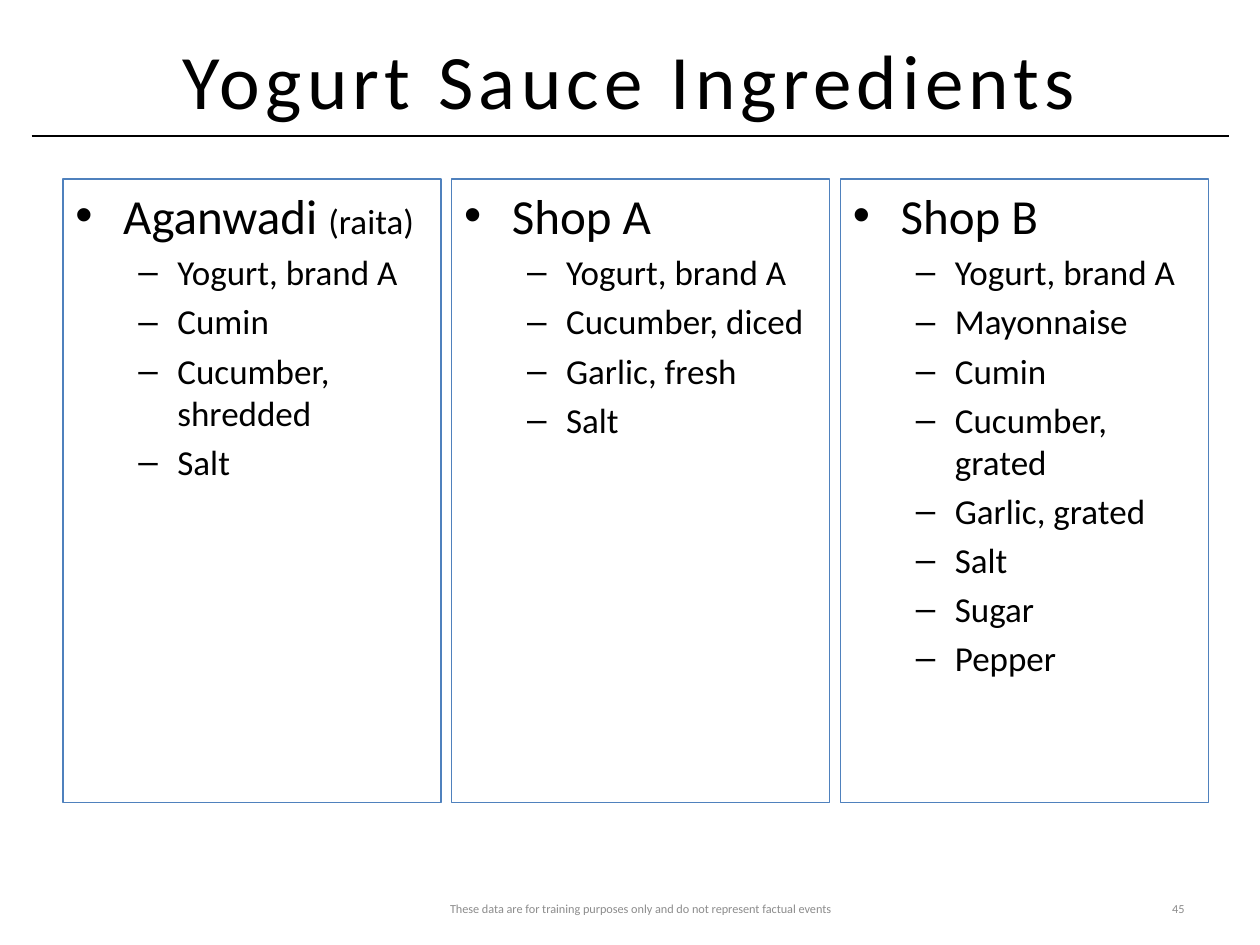
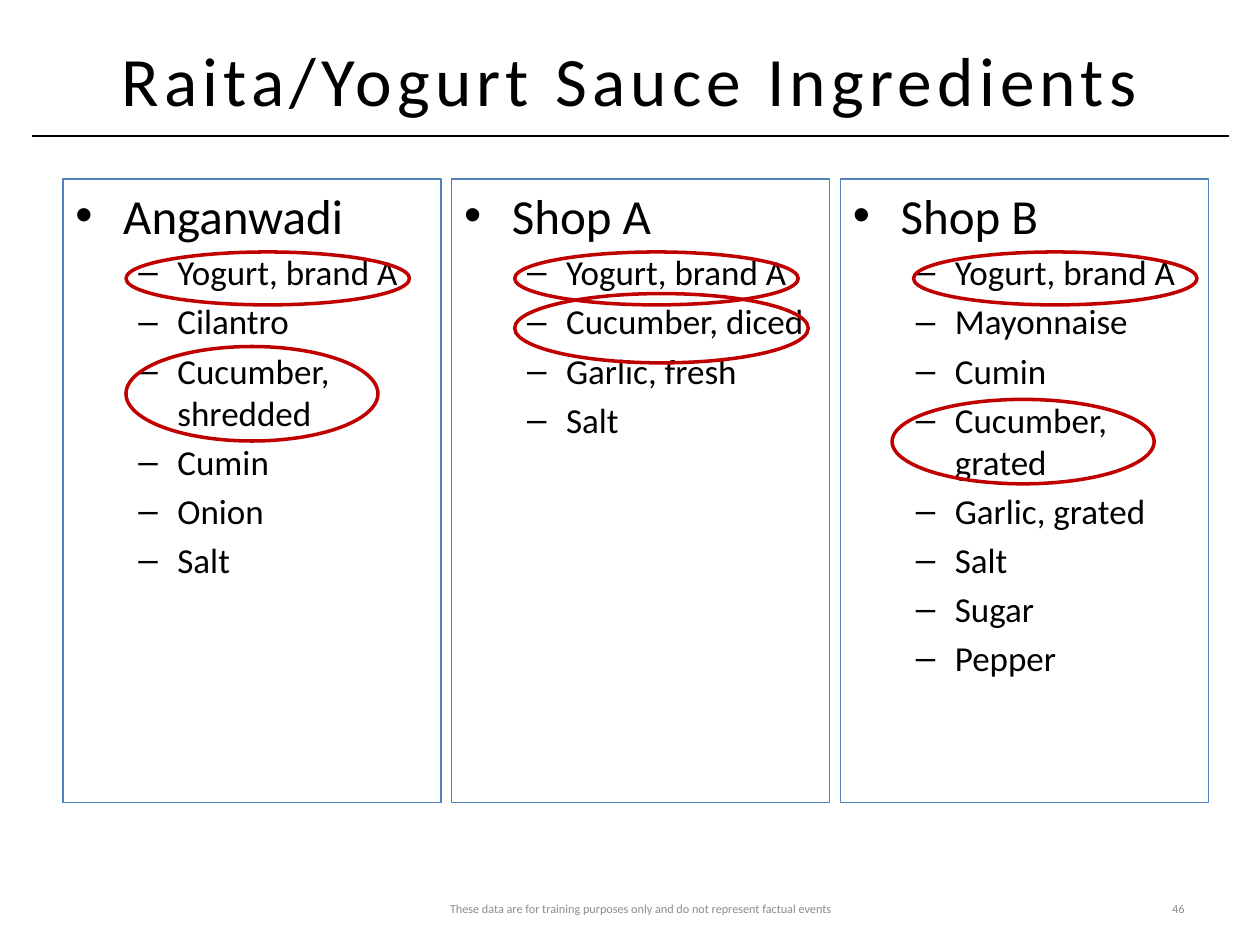
from lxml.etree import SubElement
from pptx import Presentation
from pptx.dml.color import RGBColor
from pptx.enum.shapes import MSO_CONNECTOR as CONN, MSO_SHAPE as SHAPE
from pptx.enum.text import MSO_ANCHOR as ANCHOR, PP_ALIGN as ALIGN
from pptx.oxml.ns import qn
from pptx.util import Inches, Pt

COLORS = {"text": "000000", "border": "4F81BD", "ring": "C00000", "footer": "8C8C8C"}
FONT = "Calibri"
DISCLAIMER = "These data are for training purposes only and do not represent factual events"
COLUMN_LEFT, COLUMN_TOP, COLUMN_PITCH, COLUMN_HEIGHT = 0.5, 1.42, 3.085, 4.95
COLUMN_WIDTHS = (3, 3, 2.92)

SHOP_A = ("Shop A", "", ["Yogurt, brand A", "Cucumber, diced", "Garlic, fresh", "Salt"])
SHOP_B = ("Shop B", "", ["Yogurt, brand A", "Mayonnaise", "Cumin", "Cucumber, grated",
                         "Garlic, grated", "Salt", "Sugar", "Pepper"])
RAITA = ("Aganwadi ", "(raita)", ["Yogurt, brand A", "Cumin", "Cucumber, shredded", "Salt"])
ANGANWADI = ("Anganwadi", "", ["Yogurt, brand A", "Cilantro", "Cucumber, shredded",
                               "Cumin", "Onion", "Salt"])
SHARED_RINGS = [
    [(0.5, 0.58, 2.25, 0.42), (0.5, 1.33, 2, 0.75)],
    [(0.5, 0.58, 2.25, 0.42), (0.5, 0.91, 2.33, 0.55)],
    [(0.58, 0.58, 2.25, 0.42), (0.41, 1.75, 2.08, 0.67)],
]
SLIDES = [
    ("Yogurt Sauce Ingredients", 44, 45, [RAITA, SHOP_A, SHOP_B], [[], [], []]),
    ("Raita/Yogurt Sauce Ingredients", 39.6, 46, [ANGANWADI, SHOP_A, SHOP_B], SHARED_RINGS),
]


def rgb(name):
    """Return a named palette colour."""
    return RGBColor.from_string(COLORS[name])


def add_run(p, text, size, color="text"):
    """Append a formatted run to a paragraph."""
    r = p.add_run()
    r.text = text
    r.font.name, r.font.size = FONT, Pt(size)
    r.font.color.rgb = rgb(color)
    return r


def add_label(s, box, text, size, align, color="text"):
    """Add a middle-anchored single-line text box and return its run."""
    tf = s.shapes.add_textbox(*map(Inches, box)).text_frame
    tf.word_wrap = True
    tf.vertical_anchor = ANCHOR.MIDDLE
    p = tf.paragraphs[0]
    p.alignment = align
    return add_run(p, text, size, color)


def add_outline(s, kind, box, color, width):
    """Add an unfilled preset shape with a coloured outline."""
    sp = s.shapes.add_shape(kind, *map(Inches, box))
    sp.shadow.inherit = False
    sp.fill.background()
    sp.line.color.rgb = rgb(color)
    sp.line.width = Pt(width)
    return sp


def set_bullet(p, char, margin, hang, before):
    """Give a paragraph a bullet, a hanging indent and space before."""
    p.alignment = ALIGN.LEFT
    p.space_before = Pt(before)
    pPr = p._p.get_or_add_pPr()
    pPr.set("marL", str(Inches(margin)))
    pPr.set("indent", str(-Inches(hang)))
    SubElement(pPr, qn("a:buFont"), typeface="Arial")
    SubElement(pPr, qn("a:buChar"), char=char)


def add_header(s, title, size):
    """Draw the letter-spaced title and the rule beneath it."""
    rule = s.shapes.add_connector(CONN.STRAIGHT, *map(Inches, (0.25, 1.08, 9.75, 1.08)))
    rule.line.color.rgb = rgb("text")
    rule.line.width = Pt(0.75)
    SubElement(rule._element.spPr, qn("a:effectLst"))
    r = add_label(s, (0.5, 0, 9, 1.25), title, size, ALIGN.CENTER)
    r._r.get_or_add_rPr().set("spc", "300")


def add_footer(s, number):
    """Draw the disclaimer and the page number."""
    add_label(s, (3.25, 7.08, 3.67, 0.27), DISCLAIMER, 7, ALIGN.CENTER, "footer")
    add_label(s, (7.17, 7.08, 2.33, 0.27), str(number), 7, ALIGN.RIGHT, "footer")


def add_column(s, box, column, rings):
    """Draw one vendor's ingredient list and its rings inside a box."""
    vendor, note, ingredients = column
    tf = add_outline(s, SHAPE.RECTANGLE, box, "border", 0.75).text_frame
    tf.word_wrap = True
    tf.vertical_anchor = ANCHOR.TOP
    p = tf.paragraphs[0]
    set_bullet(p, "•", 0.38, 0.38, 5.6)
    add_run(p, vendor, 28)
    if note:
        add_run(p, note, 20)
    for ingredient in ingredients:
        p = tf.add_paragraph()
        p.level = 1
        set_bullet(p, "–", 0.81, 0.31, 4)
        add_run(p, ingredient, 20)
    for x, y, w, h in rings:
        add_outline(s, SHAPE.OVAL, (box[0] + x, box[1] + y, w, h), "ring", 2)


def add_ingredients_slide(prs, title, size, number, columns, rings):
    """Build one slide comparing the vendors' ingredients."""
    s = prs.slides.add_slide(prs.slide_layouts[6])
    add_header(s, title, size)
    for i, (column, width) in enumerate(zip(columns, COLUMN_WIDTHS)):
        box = (COLUMN_LEFT + i * COLUMN_PITCH, COLUMN_TOP, width, COLUMN_HEIGHT)
        add_column(s, box, column, rings[i])
    add_footer(s, number)


def main():
    """Build and save the presentation."""
    prs = Presentation()
    prs.slide_width, prs.slide_height = Inches(10), Inches(7.5)
    for content in SLIDES:
        add_ingredients_slide(prs, *content)
    prs.save("out.pptx")


if __name__ == "__main__":
    main()
